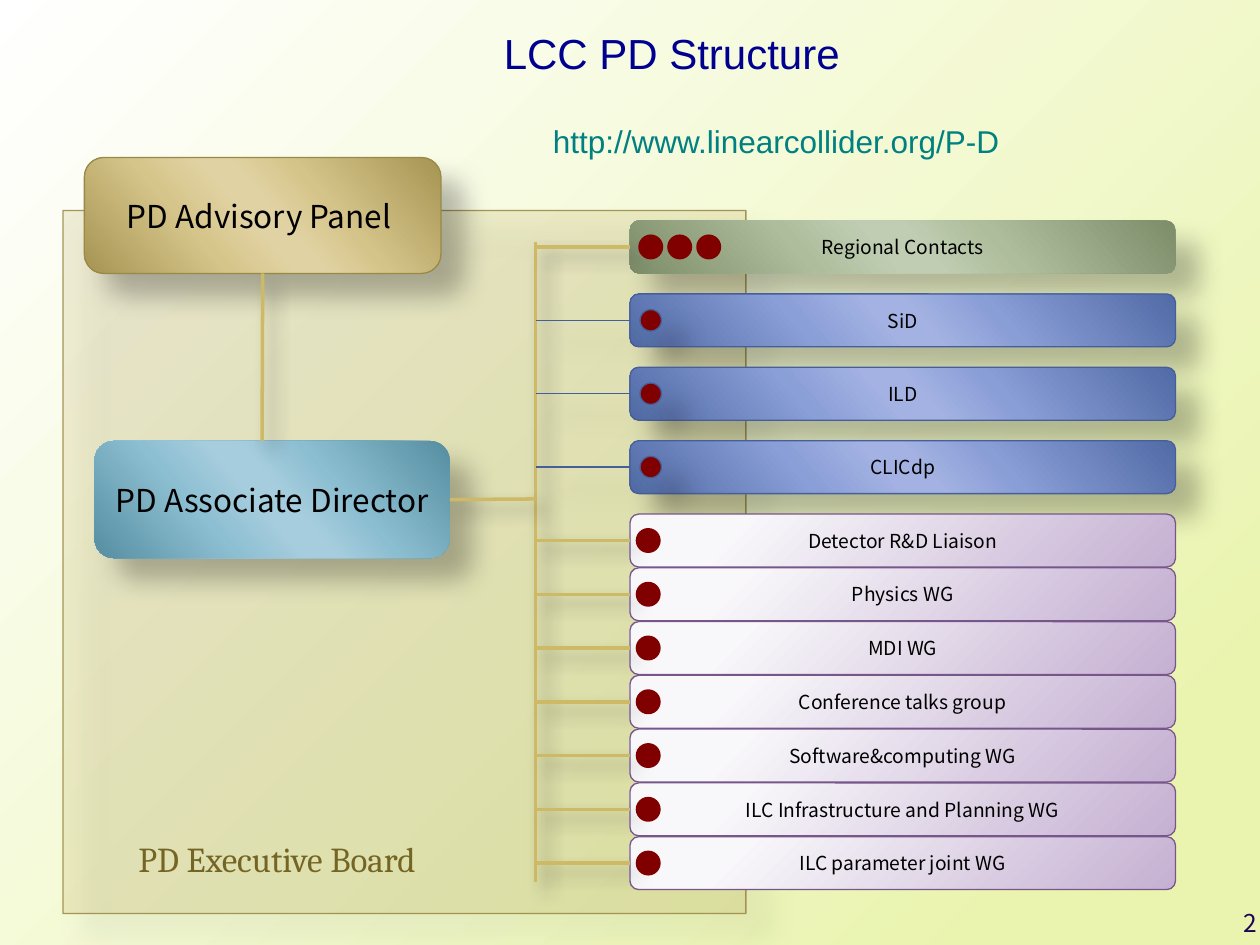
from lxml import etree
from pptx import Presentation
from pptx.dml.color import RGBColor
from pptx.enum.shapes import MSO_CONNECTOR, MSO_SHAPE
from pptx.enum.text import MSO_ANCHOR, PP_ALIGN
from pptx.oxml import parse_xml
from pptx.oxml.ns import nsdecls, qn
from pptx.util import Inches, Pt

COLORS = {
    "ink": "000000", "title": "000090", "link": "008080", "number": "1C0452",
    "board": "AF9738", "board_edge": "998946", "board_text": "756525",
    "gold": "CEB966", "dot": "800000", "blue_edge": "465F9A", "purple_edge": "77568A",
}
BAND_STOPS = (0, 33, 47, 53, 68, 100)
BANDS = {
    "blue": ("516BA6", "899DD6", "A3B2E2", "A3B2E2", "8A9ED7", "516BA6"),
    "teal": ("568EA1", "8CBED1", "A6CDDD", "A6CDDD", "8DBFD2", "568EA1"),
    "sand": ("A59452", "D5C489", "E1D2A3", "E1D2A3", "D6C58A", "A59452"),
    "green": ("7D8D6A", "AEBD9C", "C0CDB2", "C0CDB2", "AEBE9D", "7D8D6A"),
}
GRADIENT = "<a:gradFill %s rotWithShape='1'><a:gsLst>%s</a:gsLst>%s</a:gradFill>"
STOP = "<a:gs pos='%d'><a:srgbClr val='%s'/></a:gs>"
CIRCLE = "<a:path path='circle'><a:fillToRect l='%d' t='%d' r='%d' b='%d'/></a:path>"
SHADOW = ("<a:outerShdw blurRad='%d' dist='%d' dir='2700000' algn='tl' rotWithShape='0'>"
          "<a:srgbClr val='000000'><a:alpha val='%d'/></a:srgbClr></a:outerShdw>")
DEEP = SHADOW % (Pt(15), Pt(18), 26000)
SOFT = SHADOW % (Pt(10.2), Pt(8), 35000)

# Gradient fills by name
fills = {
    name: GRADIENT % (nsdecls("a"), "".join(STOP % (1000 * pos, tone) for pos, tone in zip(BAND_STOPS, tones)),
                      f"<a:lin ang='{139 * 60000}' scaled='0'/>")
    for name, tones in BANDS.items()
}
fills["purple"] = GRADIENT % (
    nsdecls("a"), STOP % (20000, "F8F7FA") + STOP % (100000, "C5B0D2"),
    CIRCLE % (-15000, -15000, 115000, 115000))
fills["page"] = GRADIENT % (
    nsdecls("a"), STOP % (13000, "EAF4AF") + STOP % (100000, "FFFFFF"),
    CIRCLE % (100000, 100000, 0, 0))


def style(item, fill=None, edge=None, width=0.75, shadow=""):
    """Set fill (gradient or plain), outline and shadow of a shape or connector."""
    properties = item._element.spPr
    if fill in fills:
        properties.find(qn("a:prstGeom")).addnext(parse_xml(fills[fill]))
    elif fill:
        item.fill.solid()
        item.fill.fore_color.rgb = RGBColor.from_string(COLORS[fill])
    if edge:
        item.line.color.rgb = RGBColor.from_string(COLORS[edge])
        item.line.width = Pt(width)
    else:
        item.line.fill.background()
    properties.append(parse_xml(f"<a:effectLst {nsdecls('a')}>{shadow}</a:effectLst>"))
    return item


def write(shape, text, size=11, font="Noto Sans CJK SC", color="ink",
          align=PP_ALIGN.CENTER, anchor=MSO_ANCHOR.MIDDLE, wrap=True):
    frame = shape.text_frame
    frame.word_wrap = wrap
    frame.vertical_anchor = anchor
    paragraph = frame.paragraphs[0]
    paragraph.alignment = align
    run = paragraph.add_run()
    run.text = text
    run.font.size = Pt(size)
    run.font.name = font
    run.font.color.rgb = RGBColor.from_string(COLORS[color])


prs = Presentation()
prs.slide_width, prs.slide_height = Inches(10), Inches(7.5)
slide = prs.slides.add_slide(prs.slide_layouts[6])
shapes = slide.shapes

# Page background
slide.background.fill.solid()
plain = slide.background._cSld.bg.bgPr.find(qn("a:solidFill"))
plain.getparent().replace(plain, parse_xml(fills["page"]))

# Executive board area, translucent
board = shapes.add_shape(MSO_SHAPE.RECTANGLE, Inches(0.5), Inches(1.67), Inches(5.42), Inches(5.58))
style(board, "board", "board_edge", shadow=DEEP)
tints = board._element.spPr.findall(".//" + qn("a:solidFill") + "/" + qn("a:srgbClr"))
for tint, alpha in zip(tints, (16, 88)):
    etree.SubElement(tint, qn("a:alpha")).set("val", str(alpha * 1000))

# Spine, advisory panel and director
SPINE = 4.25
spine = shapes.add_connector(MSO_CONNECTOR.STRAIGHT, Inches(SPINE), Inches(1.92), Inches(SPINE), Inches(7))
style(spine, edge="gold", width=2, shadow=SOFT)

director = shapes.add_shape(MSO_SHAPE.ROUNDED_RECTANGLE, Inches(0.75), Inches(3.5), Inches(2.82), Inches(0.93))
style(director, "teal", shadow=DEEP)
write(director, "PD Associate Director", size=18)
panel = shapes.add_shape(MSO_SHAPE.ROUNDED_RECTANGLE, Inches(0.67), Inches(1.25), Inches(2.83), Inches(0.92))
style(panel, "sand", "board_edge", shadow=DEEP)
write(panel, "PD Advisory Panel ", size=18)

for source, side, x1, y1, x2, y2 in (
    (panel, 2, 2.08, 2.17, 2.08, 3.5),
    (director, 3, 3.57, 3.97, SPINE, 3.96),
):
    link = shapes.add_connector(MSO_CONNECTOR.STRAIGHT, Inches(x1), Inches(y1), Inches(x2), Inches(y2))
    link.begin_connect(source, side)
    style(link, edge="gold", width=2, shadow=SOFT)

# Groups on the right: four spaced rows, then seven tight ones
ROW_LEFT, ROW_WIDTH, ROW_HEIGHT, DOT = 5, 4.33, 0.42, 0.17
FIRST, FIRST_TIGHT, LAST = 1.75, 4.08, 6.64
spaced = [("Regional Contacts", "green"), ("SiD", "blue"), ("ILD", "blue"), ("CLICdp", "blue")]
tight = ["Detector R&D Liaison", "Physics WG", "MDI WG", "Conference talks group",
         "Software&computing WG", "ILC Infrastructure and Planning WG", "ILC parameter joint WG"]
rows = [(name, kind, FIRST + i * (FIRST_TIGHT - FIRST) / len(spaced))
        for i, (name, kind) in enumerate(spaced)]
rows += [(name, "purple", FIRST_TIGHT + i * (LAST - FIRST_TIGHT) / (len(tight) - 1))
         for i, name in enumerate(tight)]
# kind: box edge, box shadow, link and dot edges, their widths and shadows, dot positions
row_styles = {
    "green": (None, DEEP, ("gold", 2, SOFT), ("dot", 2, ""), (5.08, 5.31, 5.54)),
    "blue": ("blue_edge", DEEP, ("blue_edge", 0.75, DEEP), ("blue_edge", 0.75, DEEP), (5.08,)),
    "purple": ("purple_edge", "", ("gold", 2, SOFT), ("dot", 2, ""), (5.06,)),
}
for name, kind, top in rows:
    edge, shadow, link_style, dot_style, dot_lefts = row_styles[kind]
    middle = top + ROW_HEIGHT / 2
    group = shapes.add_shape(MSO_SHAPE.ROUNDED_RECTANGLE, Inches(ROW_LEFT), Inches(top),
                             Inches(ROW_WIDTH), Inches(ROW_HEIGHT))
    style(group, kind, edge, shadow=shadow)
    write(group, name)
    link = shapes.add_connector(MSO_CONNECTOR.STRAIGHT, Inches(ROW_LEFT), Inches(middle),
                                Inches(SPINE), Inches(middle))
    link.begin_connect(group, 1)
    style(link, None, *link_style)
    for left in dot_lefts:
        dot = shapes.add_shape(MSO_SHAPE.OVAL, Inches(left), Inches(middle - DOT / 2), Inches(DOT), Inches(DOT))
        style(dot, "dot", *dot_style)

# Captions
for text, left, top, width, height, look in (
    ("PD Executive Board", 1, 6.6, 2.51, 0.44, dict(size=20, font="Cambria", color="board_text")),
    ("LCC PD Structure", 3.9, 0.17, 2.9, 0.5, dict(size=24, font="Arial", color="title", wrap=False)),
    ("http://www.linearcollider.org/P-D", 4.29, 0.92, 3.78, 0.4,
     dict(size=18, font="Arial", color="link", wrap=False)),
):
    caption = shapes.add_textbox(Inches(left), Inches(top), Inches(width), Inches(height))
    write(caption, text, align=PP_ALIGN.LEFT, anchor=MSO_ANCHOR.TOP, **look)

page_number = shapes.add_textbox(Inches(9.15), Inches(7.09), Inches(0.83), Inches(0.4))
page_number.text_frame.margin_left = page_number.text_frame.margin_right = 0
write(page_number, "2", size=14, font="Noto Sans CJK JP", color="number",
      align=PP_ALIGN.RIGHT, anchor=MSO_ANCHOR.BOTTOM)

prs.save("out.pptx")
